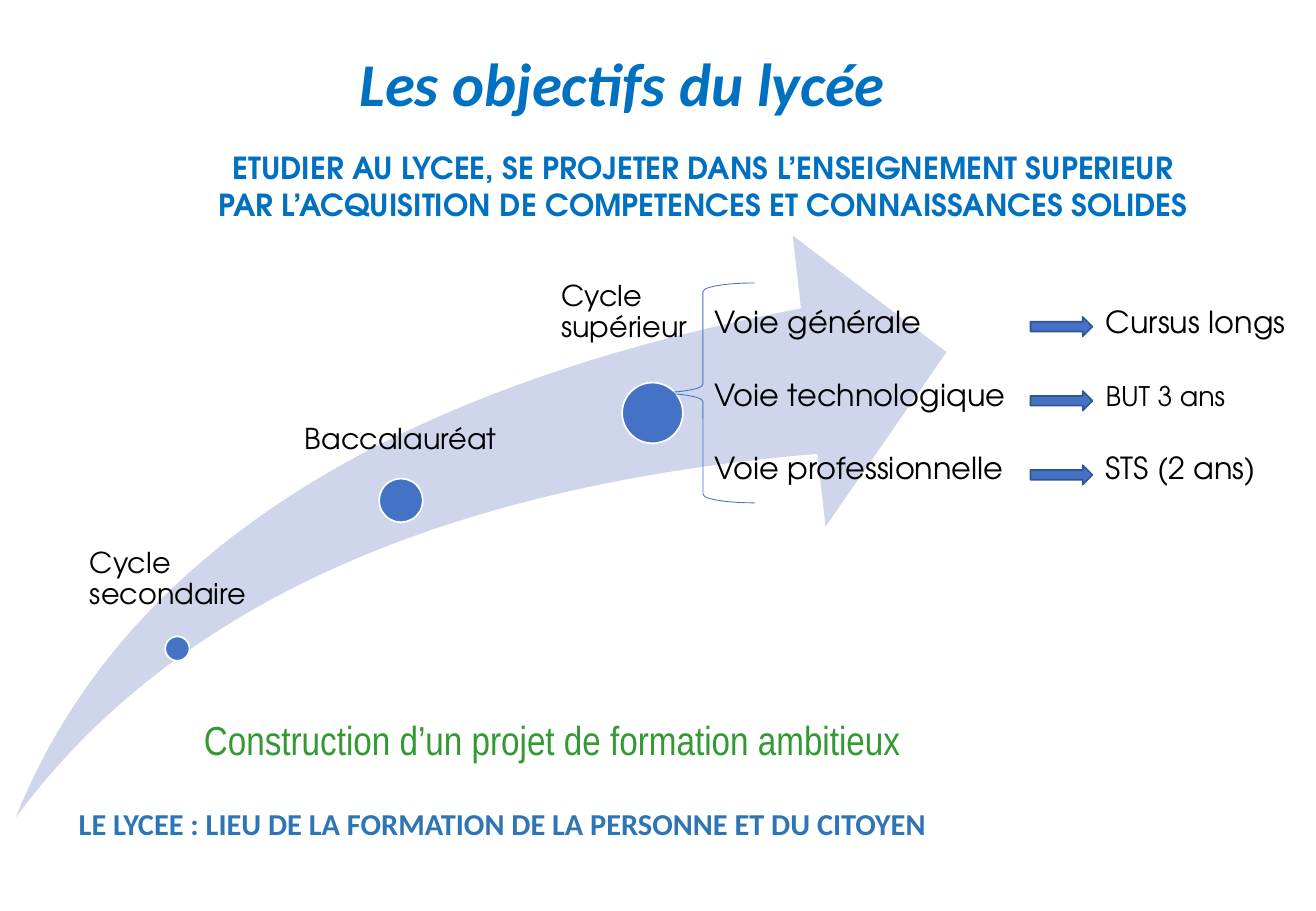
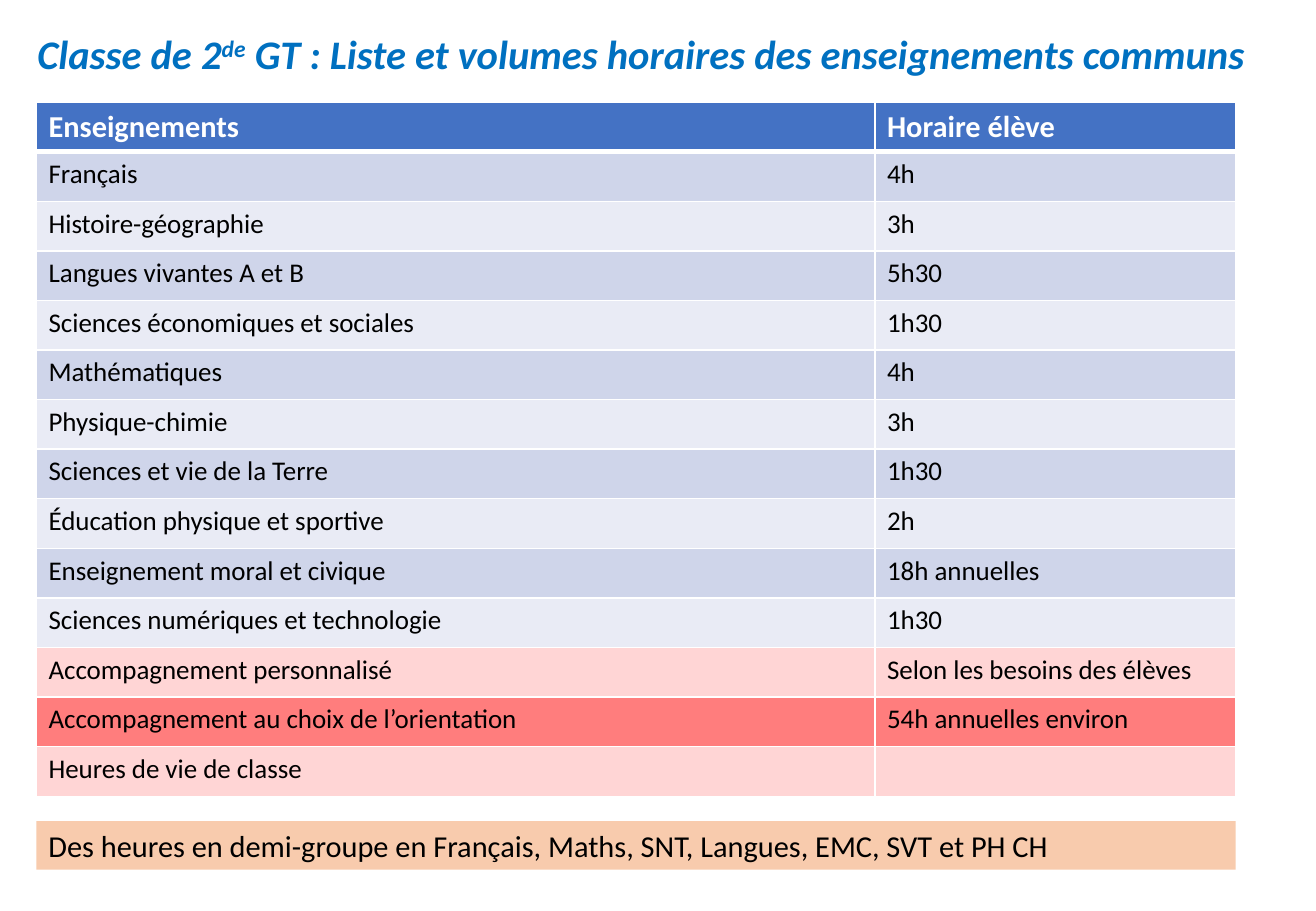
import pptx
import pptx.dml.color
import pptx.enum.shapes
import pptx.enum.text
import pptx.oxml.ns
import pptx.util
from lxml import etree

SHAPE = pptx.enum.shapes.MSO_SHAPE
CENTER = pptx.enum.text.PP_ALIGN.CENTER
PX = 9144  # EMU: 100 px to the inch

WHITE, BLACK, BLUE = "FFFFFF", "000000", "4472C4"
DARK_BLUE, PALE_BLUE, PALER_BLUE = "325491", "CFD5EA", "E9EBF5"
TITLE_BLUE, CLOSING_BLUE, GREEN = "0070C0", "2E75B6", "339933"
PINK, RED, PEACH = "FFD5D5", "FF7D7D", "F8CBAD"
ADVENTOR = "TeX Gyre Adventor"
TITLE = dict(color=TITLE_BLUE, bold=True, italic=True)

OBJECTIVES_TITLE = "Les objectifs du lycée"
MOTTO = [
    "ETUDIER AU LYCEE, SE PROJETER DANS L’ENSEIGNEMENT SUPERIEUR",
    "PAR L’ACQUISITION DE COMPETENCES ET CONNAISSANCES SOLIDES",
]
AMBITION = "Construction d’un projet de formation ambitieux"
CLOSING = "LE LYCEE : LIEU DE LA FORMATION DE LA PERSONNE ET DU CITOYEN"

# label, label box, left inset, circle left, circle top, circle diameter
STAGES = [
    ("Cycle secondaire", (63, 452, 178, 70), 11, 136, 524, 20),
    ("Baccalauréat", (232, 350, 184, 40), 19, 312, 394, 36),
    ("Cycle supérieur", (436, 232, 184, 78), 26, 512, 315, 50),
]
# route, what follows it, size of the latter
ROUTES = [
    ("Voie générale", "Cursus longs", 18),
    ("Voie technologique", "BUT 3 ans", 16),
    ("Voie professionnelle", "STS (2 ans)", 18),
]

HOURS_TITLE = [
    ("Classe de 2", {}),
    ("de", {"baseline": 30}),
    (" GT : Liste et volumes horaires des enseignements communs", {}),
]
HEADER = ("Enseignements", "Horaire élève")
SUBJECTS = [
    ("Français", "4h"),
    ("Histoire-géographie", "3h"),
    ("Langues vivantes A et B", "5h30"),
    ("Sciences économiques et sociales", "1h30"),
    ("Mathématiques", "4h"),
    ("Physique-chimie", "3h"),
    ("Sciences et vie de la Terre", "1h30"),
    ("Éducation physique et sportive", "2h"),
    ("Enseignement moral et civique", "18h annuelles"),
    ("Sciences numériques et technologie", "1h30"),
]
SUPPORT = [
    ("Accompagnement personnalisé", "Selon les besoins des élèves"),
    ("Accompagnement au choix de l’orientation", "54h annuelles environ"),
    ("Heures de vie de classe", ""),
]
HALF_GROUPS = "Des heures en demi-groupe en Français, Maths, SNT, Langues, EMC, SVT et PH CH"


def rgb(value):
    return pptx.dml.color.RGBColor.from_string(value)


def px(*lengths):
    return [pptx.util.Emu(length * PX) for length in lengths]


def write(frame, paragraphs, size=18, font="Calibri", color=BLACK, bold=False,
          italic=False, align=None, spacing=None, before=0, tab=None):
    """Fill a frame; a paragraph is a string or a list of (text, overrides)."""
    frame.word_wrap = True
    for index, content in enumerate(paragraphs):
        paragraph = frame.add_paragraph() if index else frame.paragraphs[0]
        paragraph.alignment = align
        if spacing:
            paragraph.line_spacing = spacing
        if index and before:
            paragraph.space_before = pptx.util.Pt(before)
        if tab:
            tabs = etree.SubElement(paragraph._p.get_or_add_pPr(), pptx.oxml.ns.qn("a:tabLst"))
            etree.SubElement(tabs, pptx.oxml.ns.qn("a:tab"), pos=str(tab * PX), algn="l")
        for text, changes in [(content, {})] if isinstance(content, str) else content:
            run = paragraph.add_run()
            run.text = text
            run.font.size = pptx.util.Pt(changes.get("size", size))
            run.font.name = font
            run.font.bold, run.font.italic = bold, italic
            run.font.color.rgb = rgb(color)
            if "baseline" in changes:
                run._r.get_or_add_rPr().set("baseline", str(changes["baseline"] * 1000))


def text_box(slide, box, paragraphs, inset=None, **style):
    frame = slide.shapes.add_textbox(*px(*box)).text_frame
    if inset is not None:
        frame.margin_left = px(inset)[0]
        frame.margin_top = frame.margin_right = frame.margin_bottom = 0
    write(frame, paragraphs, **style)


def draw(slide, kind, box, fill=None, line=None, width=1):
    shape = slide.shapes.add_shape(kind, *px(*box))
    shape.shadow.inherit = False
    if fill:
        shape.fill.solid()
        shape.fill.fore_color.rgb = rgb(fill)
    else:
        shape.fill.background()
    if line:
        shape.line.color.rgb = rgb(line)
        shape.line.width = pptx.util.Pt(width)
    else:
        shape.line.fill.background()
    return shape


def border(cell, top=1, bottom=1):
    """White cell edges; widths in points."""
    properties = cell._tc.get_or_add_tcPr()
    for side, width in (("L", 1), ("R", 1), ("T", top), ("B", bottom)):
        edge = etree.SubElement(properties, pptx.oxml.ns.qn("a:ln" + side),
                                w=str(pptx.util.Pt(width)))
        fill = etree.SubElement(edge, pptx.oxml.ns.qn("a:solidFill"))
        etree.SubElement(fill, pptx.oxml.ns.qn("a:srgbClr"), val=WHITE)


def build_objectives(slide):
    text_box(slide, (41, 118, 1075, 106), MOTTO, font=ADVENTOR, color=TITLE_BLUE,
             bold=True, align=CENTER)
    text_box(slide, (286, 33, 478, 71), [OBJECTIVES_TITLE], size=36, **TITLE)
    text_box(slide, (158, 584, 648, 50), [AMBITION], size=24, font="Arial Narrow", color=GREEN)

    swoosh = draw(slide, SHAPE.SWOOSH_ARROW, (13, 194, 766, 479), PALE_BLUE)
    swoosh.adjustments[0] = swoosh.adjustments[1] = 0.25
    for label, box, inset, left, top, diameter in STAGES:
        draw(slide, SHAPE.OVAL, (left, top, diameter, diameter), BLUE, WHITE)
        text_box(slide, box, [label], inset=inset, size=17, font=ADVENTOR, spacing=0.9)

    routes = [[(route + "\t", {}), (outcome, {"size": size})] for route, outcome, size in ROUTES]
    text_box(slide, (578, 245, 505, 162), routes, font=ADVENTOR, before=21.6, tab=322)
    for index in range(len(ROUTES)):
        draw(slide, SHAPE.RIGHT_ARROW, (848, 261 + 61 * index, 51, 16), BLUE, DARK_BLUE)
    draw(slide, SHAPE.LEFT_BRACE, (536, 233, 85, 181), line=BLUE, width=0.5)
    text_box(slide, (55, 658, 924, 40), [CLOSING], color=CLOSING_BLUE, bold=True)


def build_hours(slide):
    text_box(slide, (21, 19, 1047, 50), [HOURS_TITLE], size=24, **TITLE)

    rows = [(HEADER, BLUE)]
    for group, bands in ((SUBJECTS, (PALE_BLUE, PALER_BLUE)), (SUPPORT, (PINK, RED))):
        rows += [(entry, bands[index % 2]) for index, entry in enumerate(group)]
    table = slide.shapes.add_table(len(rows), len(HEADER), *px(30, 84, 987, 572)).table
    table.horz_banding = False
    for column, width in zip(table.columns, px(690, 297)):
        column.width = width
    for index, (entry, fill) in enumerate(rows):
        header = index == 0
        for cell, text in zip(table.rows[index].cells, entry):
            border(cell, top=3 if index == 1 else 1, bottom=3 if header else 1)
            cell.fill.solid()
            cell.fill.fore_color.rgb = rgb(fill)
            if text:
                write(cell.text_frame, [text], size=18 if header else 16,
                      color=WHITE if header else BLACK, bold=header)

    note = draw(slide, SHAPE.RECTANGLE, (30, 676, 987, 40), PEACH)
    write(note.text_frame, [HALF_GROUPS], align=pptx.enum.text.PP_ALIGN.LEFT)


def main():
    deck = pptx.Presentation()
    deck.slide_width, deck.slide_height = px(1083, 750)
    for build in (build_objectives, build_hours):
        build(deck.slides.add_slide(deck.slide_layouts[6]))
    deck.save("out.pptx")


if __name__ == "__main__":
    main()
